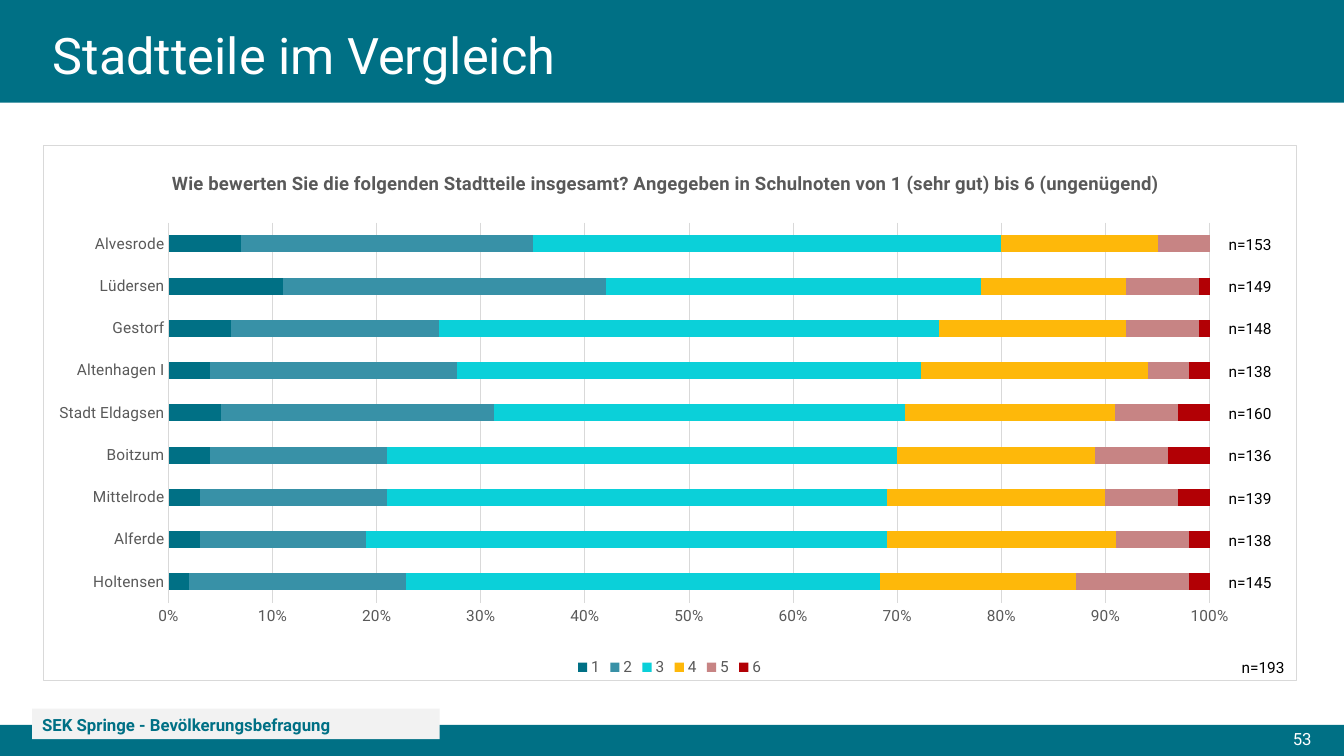
import pptx
import pptx.chart.data
import pptx.dml.color
import pptx.enum.chart
import pptx.enum.shapes
import pptx.enum.text
import pptx.oxml
import pptx.oxml.ns
import pptx.util

Pt = pptx.util.Pt
ANCHOR = pptx.enum.text.MSO_ANCHOR
ALIGN = pptx.enum.text.PP_ALIGN
CHART = pptx.enum.chart

TEAL, WHITE, BLACK = "007085", "FFFFFF", "000000"
GRAY_TEXT, GRAY_LINE, GRAY_FILL = "595959", "D9D9D9", "F2F2F2"

QUESTION = ("Wie bewerten Sie die folgenden Stadtteile insgesamt? "
            "Angegeben in Schulnoten von 1 (sehr gut) bis 6 (ungenügend)")
DISTRICTS = ["Holtensen", "Alferde", "Mittelrode", "Boitzum", "Stadt Eldagsen",
             "Altenhagen I", "Gestorf", "Lüdersen", "Alvesrode"]
GRADES = [
    ("1", TEAL, [2, 3, 3, 4, 5, 4, 6, 11, 7]),
    ("2", "3891A7", [21, 16, 18, 17, 26, 24, 20, 31, 28]),
    ("3", "0BD0D9", [46, 50, 48, 49, 39, 45, 48, 36, 45]),
    ("4", "FEB80A", [19, 22, 21, 19, 20, 22, 18, 14, 15]),
    ("5", "C78484", [11, 7, 7, 7, 6, 4, 7, 7, 5]),
    ("6", "B20005", [2, 2, 3, 4, 3, 2, 1, 1, 0]),
]
SAMPLE_SIZES = [153, 149, 148, 138, 160, 136, 139, 138, 145]


def color(value):
    return pptx.dml.color.RGBColor.from_string(value)


def apply(target, **values):
    """Set each named attribute on the target."""
    for name, value in values.items():
        setattr(target, name, value)


def chart_xml(tag, content):
    return pptx.oxml.parse_xml(
        f'<c:{tag} {pptx.oxml.ns.nsdecls("c", "a")}>{content}</c:{tag}>')


def place(element, index, **fractions):
    """Give a chart part a manual layout in fractions of the chart."""
    for layout in element.findall(pptx.oxml.ns.qn("c:layout")):
        element.remove(layout)
    target = '<c:layoutTarget val="inner"/>' if "w" in fractions else ""
    modes = '<c:xMode val="edge"/><c:yMode val="edge"/>'
    sizes = "".join(f'<c:{key} val="{value}"/>' for key, value in fractions.items())
    element.insert(index, chart_xml(
        "layout", f"<c:manualLayout>{target}{modes}{sizes}</c:manualLayout>"))


class SlideBuilder:
    def __init__(self, slide, font_name):
        self.slide = slide
        self.font_name = font_name

    def font(self, font, size, hex_color, bold=False):
        apply(font, name=self.font_name, size=Pt(size), bold=bold)
        font.color.rgb = color(hex_color)

    def fill_text(self, shape, text, size, hex_color, bold=False, align=ALIGN.LEFT,
                  anchor=ANCHOR.TOP, spacing=1.0, wrap=True):
        frame = shape.text_frame
        apply(frame, text=text, word_wrap=wrap, vertical_anchor=anchor)
        paragraph = frame.paragraphs[0]
        apply(paragraph, alignment=align, line_spacing=spacing)
        self.font(paragraph.runs[0].font, size, hex_color, bold)

    def bar(self, left, top, width, height, fill):
        shape = self.slide.shapes.add_shape(
            pptx.enum.shapes.MSO_SHAPE.RECTANGLE,
            Pt(left), Pt(top), Pt(width), Pt(height))
        shape.shadow.inherit = False
        shape.fill.solid()
        shape.fill.fore_color.rgb = color(fill)
        shape.line.fill.background()
        return shape

    def label(self, left, top, width, height, text, size, hex_color, **values):
        box = self.slide.shapes.add_textbox(Pt(left), Pt(top), Pt(width), Pt(height))
        self.fill_text(box, text, size, hex_color, **values)

    def title(self, left, top, width, height, text):
        """Format the title and bring it in front of the header bar."""
        title = self.slide.shapes.title
        apply(title, left=Pt(left), top=Pt(top), width=Pt(width), height=Pt(height))
        self.fill_text(title, text, 36, WHITE, anchor=ANCHOR.MIDDLE, spacing=0.9)
        self.slide.shapes.element.append(title.element)

    def grade_chart(self, left, top, width, height):
        data = pptx.chart.data.CategoryChartData()
        data.categories = DISTRICTS
        for name, _, values in GRADES:
            data.add_series(name, values)
        chart = self.slide.shapes.add_chart(
            CHART.XL_CHART_TYPE.BAR_STACKED_100,
            Pt(left), Pt(top), Pt(width), Pt(height), data).chart
        root = chart.element
        self.font(chart.font, 11, GRAY_TEXT)

        chart.chart_title.text_frame.text = QUESTION
        heading = chart.chart_title.text_frame.paragraphs[0].runs[0]
        self.font(heading.font, 13.2, GRAY_TEXT, bold=True)
        place(root.find(".//" + pptx.oxml.ns.qn("c:title")), 1, x=0.1, y=0.04)

        chart.has_legend = True
        apply(chart.legend, position=CHART.XL_LEGEND_POSITION.BOTTOM,
              include_in_layout=False)
        self.font(chart.legend.font, 11, GRAY_TEXT)

        plot = chart.plots[0]
        apply(plot, gap_width=150, overlap=100, vary_by_categories=False)
        for series, (_, fill, _) in zip(plot.series, GRADES):
            series.format.fill.solid()
            series.format.fill.fore_color.rgb = color(fill)

        districts, share = chart.category_axis, chart.value_axis
        for axis in (districts, share):
            apply(axis, major_tick_mark=CHART.XL_TICK_MARK.NONE,
                  minor_tick_mark=CHART.XL_TICK_MARK.NONE)
            self.font(axis.tick_labels.font, 11, GRAY_TEXT)
        apply(share, has_major_gridlines=True, major_unit=0.1,
              minimum_scale=0, maximum_scale=1)
        apply(share.tick_labels, number_format="0%", number_format_is_linked=False)
        share.format.line.fill.background()
        for line in (districts.format.line, share.major_gridlines.format.line):
            line.color.rgb = color(GRAY_LINE)
            line.width = Pt(0.75)

        place(root.find(".//" + pptx.oxml.ns.qn("c:plotArea")), 0,
              x=0.1, y=0.144, w=0.831, h=0.711)
        solid = '<a:solidFill><a:srgbClr val="{}"/></a:solidFill>'
        root.find(pptx.oxml.ns.qn("c:chart")).addnext(chart_xml(
            "spPr", solid.format(WHITE)
            + f'<a:ln w="{int(Pt(0.75))}">{solid.format(GRAY_LINE)}</a:ln>'))


def main():
    presentation = pptx.Presentation()
    apply(presentation, slide_width=Pt(960), slide_height=Pt(540))
    slide = presentation.slides.add_slide(presentation.slide_layouts[5])
    builder = SlideBuilder(slide, "Roboto")

    builder.bar(0, 0, 960, 73.4, TEAL)
    builder.bar(0, 517.7, 960, 22.3, TEAL)
    builder.label(628, 517, 316, 21.6, "53", 12, WHITE,
                  align=ALIGN.RIGHT, anchor=ANCHOR.MIDDLE)
    footer = builder.bar(23, 506.2, 291, 21.8, GRAY_FILL)
    builder.fill_text(footer, "SEK Springe - Bevölkerungsbefragung", 12, TEAL,
                      bold=True, anchor=ANCHOR.MIDDLE, spacing=1.07)
    builder.grade_chart(30.5, 103.7, 895.7, 383)
    builder.title(30.5, 15, 828, 52.6, "Stadtteile im Vergleich")

    for row, size in enumerate(SAMPLE_SIZES):
        builder.label(870.5, 164.2 + row * 30.24, 46.8, 20.6, f"n={size}", 11, BLACK,
                      wrap=False)
    builder.label(879.8, 466.6, 46.8, 20.6, "n=193", 11, BLACK, wrap=False)

    presentation.save("out.pptx")


if __name__ == "__main__":
    main()
